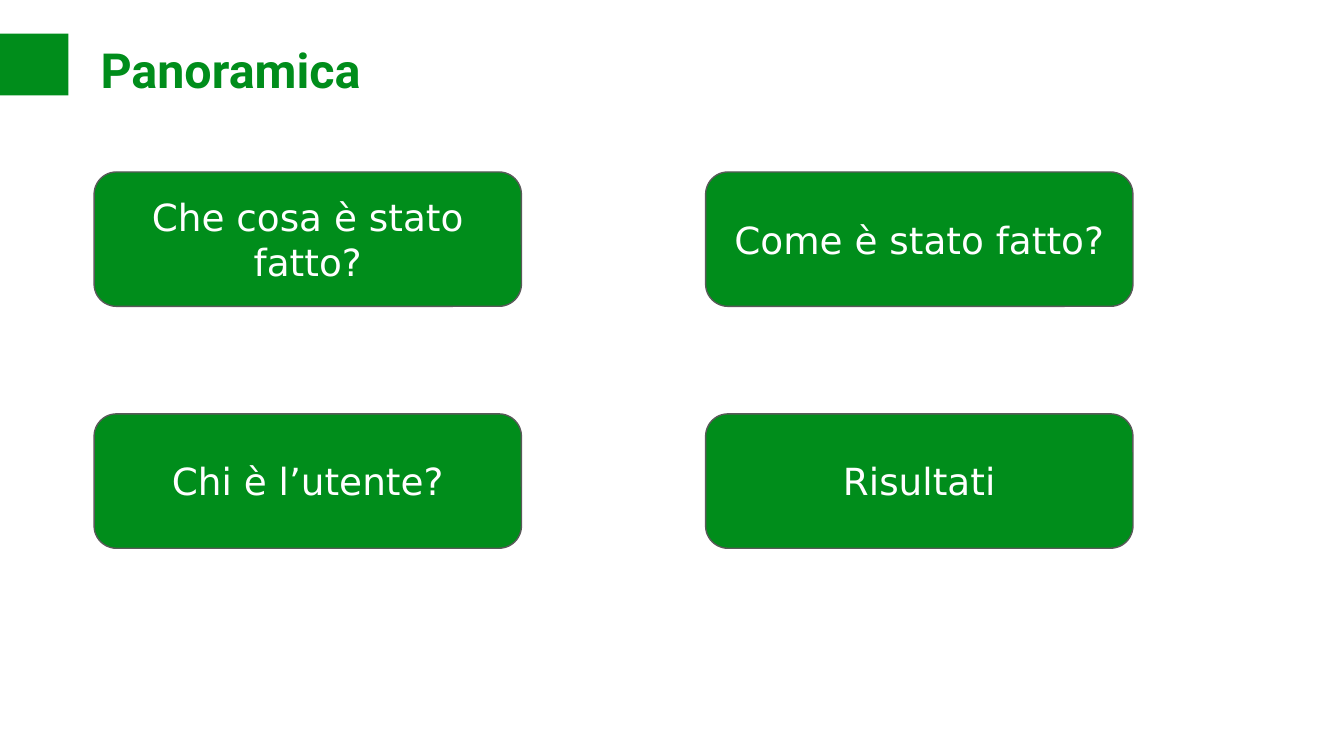
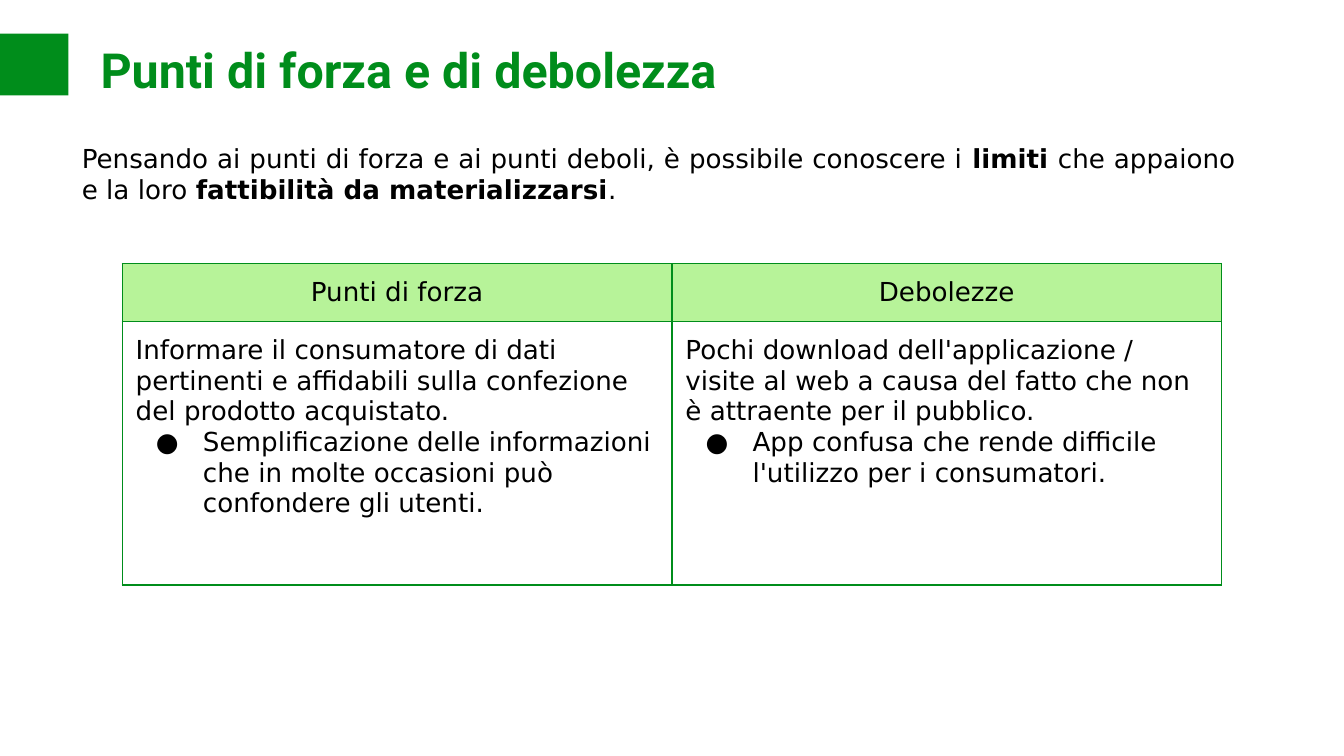
import pptx
import pptx.util
import pptx.dml.color
import pptx.enum.shapes
import pptx.enum.text
import pptx.oxml.ns
import lxml.etree

Inches = pptx.util.Inches
Pt = pptx.util.Pt
RGBColor = pptx.dml.color.RGBColor
Align = pptx.enum.text.PP_ALIGN
Anchor = pptx.enum.text.MSO_ANCHOR
Preset = pptx.enum.shapes.MSO_SHAPE
qn = pptx.oxml.ns.qn

# Content
OVERVIEW_TITLE = "Panoramica"
OVERVIEW_TOPICS = [
    ["Che cosa è stato fatto?", "Come è stato fatto?"],
    ["Chi è l’utente?", "Risultati"],
]
BALANCE_TITLE = "Punti di forza e di debolezza"
BALANCE_INTRO = [  # (text, bold)
    ("Pensando ai punti di forza e ai punti deboli, è possibile conoscere i ", False),
    ("limiti ", True),
    ("che appaiono e la loro ", False),
    ("fattibilità da materializzarsi", True),
    (".", False),
]
BALANCE_COLUMNS = [  # (heading, statement, bullet)
    ("Punti di forza",
     "Informare il consumatore di dati pertinenti e affidabili sulla confezione del prodotto acquistato.",
     "Semplificazione delle informazioni che in molte occasioni può confondere gli utenti."),
    ("Debolezze",
     "Pochi download dell'applicazione / visite al web a causa del fatto che non è attraente per il pubblico.",
     "App confusa che rende difficile l'utilizzo per i consumatori."),
]

# Shared style
GREEN = RGBColor(0x00, 0x8D, 0x1B)
LIGHT_GREEN = RGBColor(0xB7, 0xF3, 0x99)
GRAY = RGBColor(0x59, 0x59, 0x59)
BLACK = RGBColor(0x00, 0x00, 0x00)
WHITE = RGBColor(0xFF, 0xFF, 0xFF)
TITLE_FONT = "Roboto"
BODY_FONT = "DejaVu Sans"
BODY_SIZE = 14


def style_run(run, size, color, font=BODY_FONT, bold=False):
    run.font.name = font
    run.font.size = Pt(size)
    run.font.color.rgb = color
    run.font.bold = bold


def set_frame(text_frame, anchor, vertical_inset=0.1):
    text_frame.word_wrap = True
    text_frame.vertical_anchor = anchor
    text_frame.margin_left = text_frame.margin_right = Inches(0.1)
    text_frame.margin_top = text_frame.margin_bottom = Inches(vertical_inset)


def add_box(slide, preset, left, top, width, height):
    shape = slide.shapes.add_shape(
        preset, Inches(left), Inches(top), Inches(width), Inches(height))
    shape.shadow.inherit = False
    shape.fill.solid()
    shape.fill.fore_color.rgb = GREEN
    shape.line.fill.background()
    return shape


def add_titled_slide(presentation, title, title_width):
    slide = presentation.slides.add_slide(presentation.slide_layouts[6])
    title_box = slide.shapes.add_textbox(
        Inches(0.65), Inches(0.25), Inches(title_width), Inches(0.46))
    set_frame(title_box.text_frame, Anchor.MIDDLE)
    title_box.text_frame.text = title
    paragraph = title_box.text_frame.paragraphs[0]
    paragraph.line_spacing = 1.15
    paragraph.space_after = Pt(12)
    style_run(paragraph.runs[0], 25.9, GREEN, TITLE_FONT, True)
    add_box(slide, Preset.RECTANGLE, -0.03, 0.25, 0.54, 0.46)
    return slide


def add_bullet(paragraph):
    properties = paragraph._p.get_or_add_pPr()
    properties.set("marL", str(Inches(0.5)))
    properties.set("indent", str(Inches(-0.35)))
    color = lxml.etree.SubElement(properties, qn("a:buClr"))
    lxml.etree.SubElement(color, qn("a:srgbClr"), val=str(BLACK))
    lxml.etree.SubElement(properties, qn("a:buFont"), typeface=BODY_FONT)
    lxml.etree.SubElement(properties, qn("a:buChar"), char="●")


def set_borders(cell):
    properties = cell._tc.get_or_add_tcPr()
    for position, side in enumerate(("a:lnL", "a:lnR", "a:lnT", "a:lnB")):
        line = lxml.etree.Element(qn(side), w=str(Pt(0.75)))
        fill = lxml.etree.SubElement(line, qn("a:solidFill"))
        lxml.etree.SubElement(fill, qn("a:srgbClr"), val=str(GREEN))
        properties.insert(position, line)


def fill_cell(cell, text, alignment, fill_color=None):
    cell.margin_left = cell.margin_right = Inches(0.1)
    cell.margin_top = cell.margin_bottom = Inches(0.1)
    if fill_color is None:
        cell.fill.background()
    else:
        cell.fill.solid()
        cell.fill.fore_color.rgb = fill_color
    set_borders(cell)
    cell.text_frame.text = text
    for paragraph in cell.text_frame.paragraphs:
        paragraph.alignment = alignment
        style_run(paragraph.runs[0], BODY_SIZE, BLACK)


def build_overview(presentation):
    slide = add_titled_slide(presentation, OVERVIEW_TITLE, 7.2)
    # Grid of topic cards
    for row, topics in enumerate(OVERVIEW_TOPICS):
        for column, topic in enumerate(topics):
            card = add_box(slide, Preset.ROUNDED_RECTANGLE,
                           0.7 + 4.55 * column, 1.28 + 1.8 * row, 3.18, 1)
            card.line.color.rgb = GRAY
            card.line.width = Pt(0.75)
            set_frame(card.text_frame, Anchor.MIDDLE)
            card.text_frame.text = topic
            paragraph = card.text_frame.paragraphs[0]
            paragraph.alignment = Align.CENTER
            style_run(paragraph.runs[0], 20, WHITE)


def build_balance(presentation):
    slide = add_titled_slide(presentation, BALANCE_TITLE, 5.37)
    # Introduction
    intro = slide.shapes.add_textbox(
        Inches(0.51), Inches(1.01), Inches(8.78), Inches(0.64))
    set_frame(intro.text_frame, Anchor.TOP, 0.05)
    paragraph = intro.text_frame.paragraphs[0]
    paragraph.alignment = Align.JUSTIFY
    for text, bold in BALANCE_INTRO:
        run = paragraph.add_run()
        run.text = text
        style_run(run, BODY_SIZE, BLACK, bold=bold)

    # Strengths and weaknesses table
    table = slide.shapes.add_table(
        2, len(BALANCE_COLUMNS), Inches(0.91), Inches(1.96),
        Inches(8.18), Inches(2.39)).table
    table.first_row = table.horz_banding = False
    table.rows[0].height = Inches(0.41)
    table.rows[1].height = Inches(1.96)
    for column, (heading, statement, bullet) in enumerate(BALANCE_COLUMNS):
        table.columns[column].width = Inches(4.09)
        fill_cell(table.cell(0, column), heading, Align.CENTER, LIGHT_GREEN)
        body = table.cell(1, column)
        fill_cell(body, statement + "\n" + bullet, Align.LEFT)
        add_bullet(body.text_frame.paragraphs[1])


def main():
    presentation = pptx.Presentation()
    # Widescreen 16:9
    presentation.slide_width = Inches(10)
    presentation.slide_height = presentation.slide_width * 9 // 16
    build_overview(presentation)
    build_balance(presentation)
    presentation.save("out.pptx")


if __name__ == "__main__":
    main()
